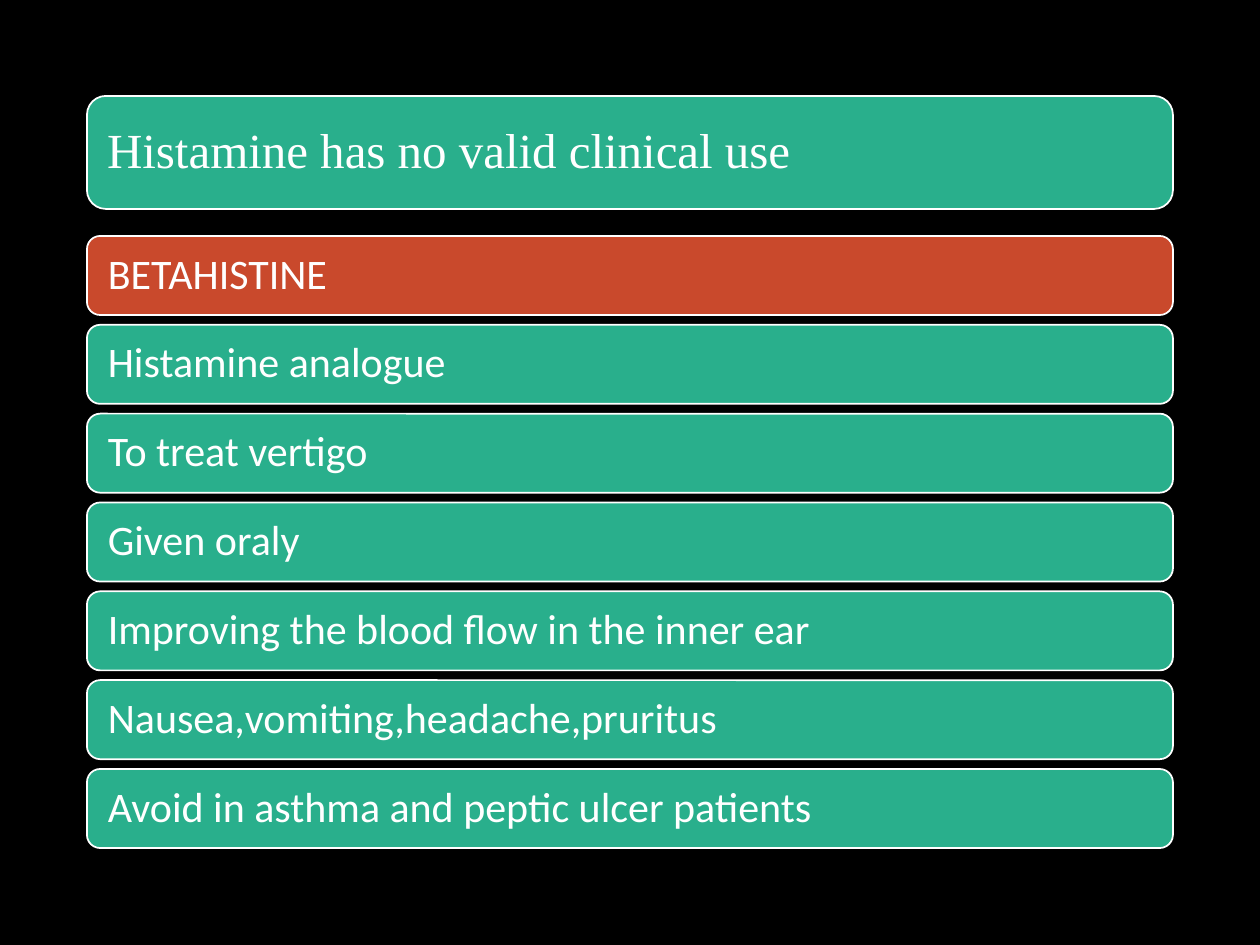
from pptx import Presentation
from pptx.dml.color import RGBColor
from pptx.enum.shapes import MSO_SHAPE
from pptx.enum.text import MSO_ANCHOR, MSO_AUTO_SIZE, PP_ALIGN
from pptx.util import Pt

PX = 914400 / 126
BLACK = RGBColor(0x00, 0x00, 0x00)
WHITE = RGBColor(0xFF, 0xFF, 0xFF)
GREEN = RGBColor(0x29, 0xAF, 0x8C)
RED = RGBColor(0xC9, 0x49, 0x2C)

BAR_LEFT, BAR_WIDTH = 87, 1086
TITLE_TOP, TITLE_HEIGHT = 96, 113
FIRST_TOP, LAST_TOP, BAR_HEIGHT = 236, 769, 79

DRUG = "BETAHISTINE"
FACTS = [
    "Histamine analogue",
    "To treat vertigo",
    "Given oraly",
    "Improving the blood flow in the inner ear",
    "Nausea,vomiting,headache,pruritus",
    "Avoid in asthma and peptic ulcer patients",
]


def px(length):
    return round(length * PX)


def write(shape, text, *, size, font, inset):
    """Put one left-aligned, vertically centred line into the shape."""
    frame = shape.text_frame
    frame.word_wrap = True
    frame.auto_size = MSO_AUTO_SIZE.NONE
    frame.vertical_anchor = MSO_ANCHOR.MIDDLE
    frame.margin_left = frame.margin_right = px(inset)
    frame.margin_top = frame.margin_bottom = 0
    paragraph = frame.paragraphs[0]
    paragraph.alignment = PP_ALIGN.LEFT
    paragraph.line_spacing = 0.9
    run = paragraph.add_run()
    run.text = text
    run.font.size = Pt(size)
    run.font.name = font
    run.font.color.rgb = WHITE


def add_bar(slide, top, height, color):
    bar = slide.shapes.add_shape(MSO_SHAPE.ROUNDED_RECTANGLE, px(BAR_LEFT),
                                 px(top), px(BAR_WIDTH), px(height))
    bar.shadow.inherit = False
    bar.fill.solid()
    bar.fill.fore_color.rgb = color
    bar.line.color.rgb = WHITE
    bar.line.width = Pt(1)
    return bar


def add_title(slide, text):
    """Lay the title placeholder over its own bar."""
    bar = add_bar(slide, TITLE_TOP, TITLE_HEIGHT, GREEN)
    title = slide.shapes.title
    title.left, title.top = bar.left, bar.top
    title.width, title.height = bar.width, bar.height
    write(title, text, size=28, font="Times New Roman", inset=20)
    bar._element.addnext(title._element)


def add_bar_list(slide, heading, items):
    lines = [heading, *items]
    pitch = (LAST_TOP - FIRST_TOP) / (len(lines) - 1)
    for row, line in enumerate(lines):
        color = RED if row == 0 else GREEN
        bar = add_bar(slide, FIRST_TOP + row * pitch, BAR_HEIGHT, color)
        write(bar, line, size=24, font="Calibri", inset=17)


def main():
    deck = Presentation()
    deck.slide_width, deck.slide_height = px(1260), px(945)
    slide = deck.slides.add_slide(deck.slide_layouts[5])
    slide.background.fill.solid()
    slide.background.fill.fore_color.rgb = BLACK
    add_title(slide, "Histamine has no valid clinical use")
    add_bar_list(slide, DRUG, FACTS)
    deck.save("out.pptx")


if __name__ == "__main__":
    main()
